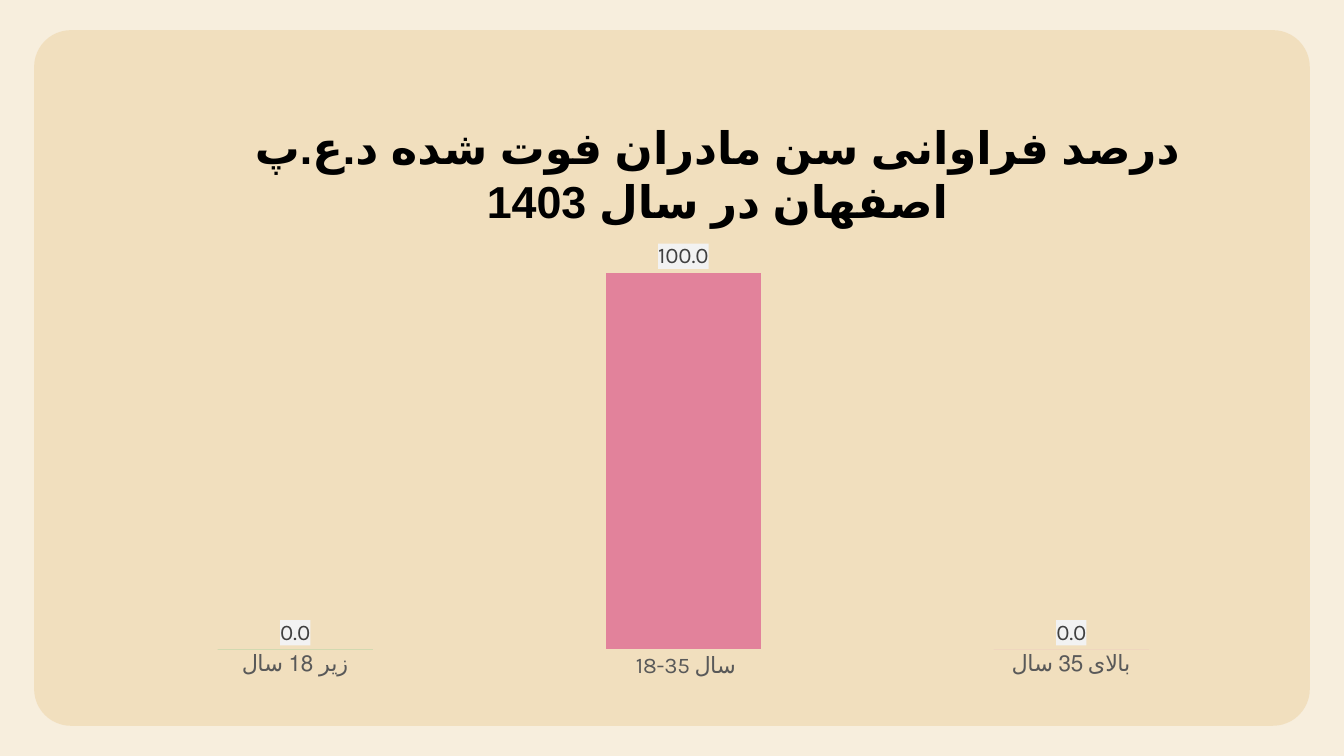
from lxml import etree
from pptx import Presentation
from pptx.chart.data import CategoryChartData
from pptx.dml.color import RGBColor
from pptx.enum.chart import XL_CHART_TYPE as CT, XL_LABEL_POSITION as LP, XL_TICK_MARK as TM
from pptx.enum.shapes import MSO_SHAPE
from pptx.enum.text import MSO_AUTO_SIZE, PP_ALIGN
from pptx.oxml import parse_xml
from pptx.oxml.ns import nsdecls, qn
from pptx.util import Cm, Pt


def paint(fill, color):
    fill.solid()
    fill.fore_color.rgb = RGBColor.from_string(color)


def style(font, size, color, name):
    font.size = Pt(size)
    font.name = name
    paint(font.fill, color)


prs = Presentation()
prs.slide_width, prs.slide_height = Cm(33.87), Cm(19.05)
s = prs.slides.add_slide(prs.slide_layouts[6])
paint(s.background.fill, "F7EEDD")

panel = s.shapes.add_shape(MSO_SHAPE.ROUNDED_RECTANGLE, Cm(0.86), Cm(0.76), Cm(32.15), Cm(17.53))
panel.adjustments[0] = 0.053
panel.shadow.inherit = False
panel.line.fill.background()
paint(panel.fill, "EED6AA")
tint = panel.fill._xPr.find(qn("a:solidFill"))[0]
etree.SubElement(tint, qn("a:alpha"), val="60000")

title = s.shapes.add_textbox(Cm(4.65), Cm(2.9), Cm(26.87), Cm(1.63))
tf = title.text_frame
tf.word_wrap = True
tf.auto_size = MSO_AUTO_SIZE.SHAPE_TO_FIT_TEXT
p = tf.paragraphs[0]
p.alignment = PP_ALIGN.CENTER
p._p.get_or_add_pPr().set("rtl", "1")
r = p.add_run()
r.text = "درصد فراوانی سن مادران فوت شده د.ع.پ اصفهان در سال 1403"
style(r.font, 32, "000000", "Times New Roman")
r.font.bold = True
rpr = r._r.get_or_add_rPr()
rpr.set("lang", "fa-IR")
etree.SubElement(rpr, qn("a:cs"), typeface="Arial")

data = CategoryChartData(number_format="0.0")
data.categories = ["زیر 18 سال", " 18-35 سال", "بالای 35 سال"]
data.add_series("Series 1", [0, 100, 0])
chart = s.shapes.add_chart(CT.COLUMN_CLUSTERED, Cm(1.94), Cm(4.73), Cm(30.56), Cm(12.62), data).chart
chart.has_title = False
chart.has_legend = False
style(chart.font, 10, "000000", "Karla")

ages = chart.category_axis
ages.major_tick_mark = TM.NONE
ages.format.line.fill.background()
style(ages.tick_labels.font, 16, "595959", "Karla")

percent = chart.value_axis
percent.minimum_scale, percent.maximum_scale = 0, 120
percent.has_major_gridlines = False
percent.visible = False

plot = chart.plots[0]
plot.gap_width = 150
plot.vary_by_categories = False
bars = plot.series[0]
paint(bars.format.fill, "93CDDD")
for i, color in enumerate(["00B050", "E2829B", "E59BC5"]):
    paint(bars.points[i].format.fill, color)

labels = bars.data_labels
labels.show_value = True
labels.number_format = "0.0"
labels.number_format_is_linked = False
labels.position = LP.OUTSIDE_END
style(labels.font, 16, "404040", "Karla")
box = parse_xml(f'<c:spPr {nsdecls("c", "a")}><a:solidFill><a:srgbClr val="F2F2F2"/></a:solidFill></c:spPr>')
labels._element.find(qn("c:txPr")).addprevious(box)

prs.save("out.pptx")
